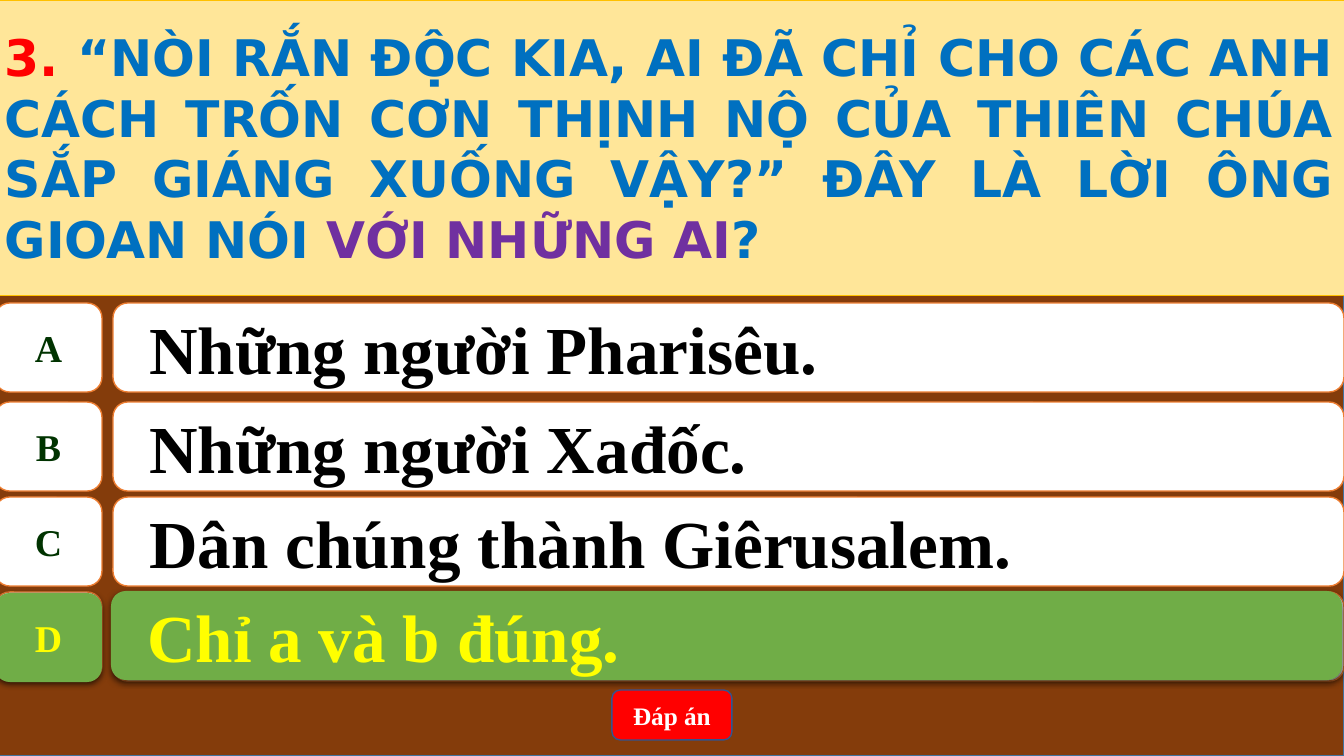
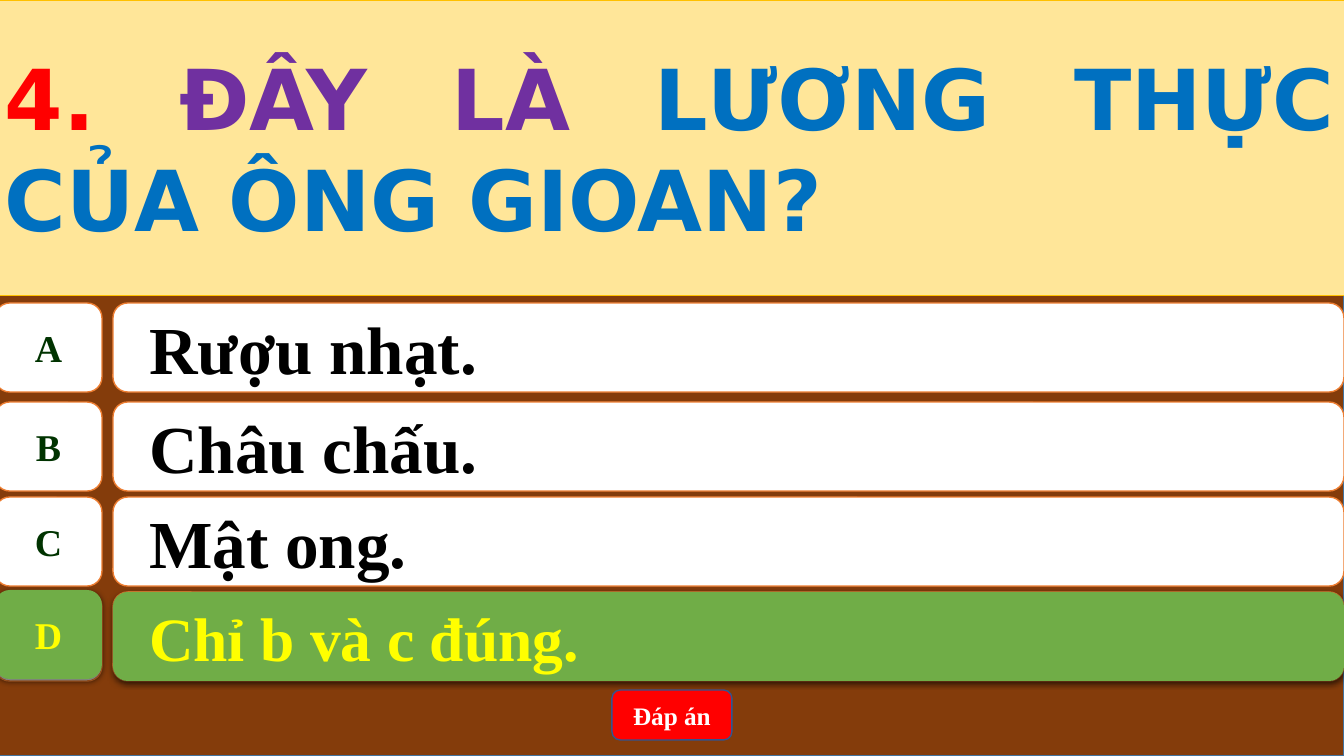
from dataclasses import dataclass

from lxml.etree import SubElement
from pptx import Presentation
from pptx.dml.color import RGBColor as Rgb
from pptx.enum.shapes import MSO_SHAPE as Shape
from pptx.enum.text import MSO_ANCHOR as Anchor, PP_ALIGN as Align
from pptx.oxml.ns import qn
from pptx.util import Emu, Pt

EMU_PER_PX = 914400 / 100.8


def px(length):
    return Emu(round(length * EMU_PER_PX))


@dataclass(frozen=True)
class Theme:
    # Colours
    board: str = "843C0B"
    board_line: str = "43739E"
    banner: str = "FFE699"
    banner_line: str = "FFC000"
    white: str = "FFFFFF"
    black: str = "000000"
    row_line: str = "ED7D31"
    letter: str = "003300"
    right_fill: str = "70AD47"
    right_text: str = "FFFF00"
    red: str = "FF0000"
    blue: str = "0070C0"
    purple: str = "7030A0"
    button_line: str = "325491"
    # Fonts and type sizes
    question_font: str = "DejaVu Sans"
    answer_font: str = "Times New Roman"
    letter_size: int = 27
    button_size: int = 18


THEME = Theme()
WIDTH, HEIGHT = 1344, 756
EDGE = -5  # bands start just outside the left edge
ROW_TOPS = (303, 402, 497, 592)
ROW_HEIGHT = 89
LETTER_WIDTH = 107
ANSWER_LEFT, ANSWER_WIDTH = 113, 1231


class QuizDeck:
    def __init__(self, theme):
        self.theme = theme
        self.deck = Presentation()
        self.deck.slide_width, self.deck.slide_height = px(WIDTH), px(HEIGHT)
        self.slide = None

    def new_slide(self):
        self.slide = self.deck.slides.add_slide(self.deck.slide_layouts[6])
        self.box(Shape.RECTANGLE, (EDGE, 0, WIDTH - EDGE, HEIGHT),
                 self.theme.board, self.theme.board_line)

    def box(self, kind, place, fill, line=None, weight=1, group=None):
        shapes = (group or self.slide).shapes
        box = shapes.add_shape(kind, *(px(length) for length in place))
        box.shadow.inherit = False
        box.fill.solid()
        box.fill.fore_color.rgb = Rgb.from_string(fill)
        if line:
            box.line.color.rgb = Rgb.from_string(line)
            box.line.width = Pt(weight)
        else:
            box.line.fill.background()
        return box

    def add_text(self, box, runs, font, size, align, wrap=True):
        frame = box.text_frame
        frame.word_wrap = wrap
        frame.vertical_anchor = Anchor.MIDDLE
        para = frame.paragraphs[0]
        para.alignment = align
        for text, color in runs:
            span = para.add_run()
            span.text = text
            span.font.name = font
            span.font.size = Pt(size)
            span.font.bold = True
            span.font.color.rgb = Rgb.from_string(color)
        return para

    def drop_shadow(self, box):
        effects = box._element.spPr.find(qn("a:effectLst"))
        shadow = SubElement(effects, qn("a:outerShdw"), blurRad=str(Pt(4.5)),
                            dist=str(Pt(1.5)), dir="5400000", algn="ctr", rotWithShape="0")
        color = SubElement(shadow, qn("a:srgbClr"), val=self.theme.black)
        SubElement(color, qn("a:alpha"), val="63000")

    def question(self, runs, size):
        banner = self.box(Shape.RECTANGLE, (EDGE, 0, WIDTH - EDGE, 295),
                          self.theme.banner, self.theme.banner_line, 0.5)
        self.add_text(banner, runs, self.theme.question_font, size, Align.JUSTIFY)

    def row_boxes(self, letter_top, answer_top, answer_left, fill, line=None):
        group = self.slide.shapes.add_group_shape()
        letter_box = self.box(Shape.FLOWCHART_ALTERNATE_PROCESS,
                              (EDGE, letter_top, LETTER_WIDTH, ROW_HEIGHT),
                              fill, line, group=group)
        answer_box = self.box(Shape.ROUNDED_RECTANGLE,
                              (answer_left, answer_top, ANSWER_WIDTH, ROW_HEIGHT),
                              fill, line, group=group)
        return letter_box, answer_box

    def row_text(self, boxes, letter, answer, size, letter_color, answer_color):
        font = self.theme.answer_font
        self.add_text(boxes[0], [(letter, letter_color)], font,
                      self.theme.letter_size, Align.CENTER, wrap=False)
        para = self.add_text(boxes[1], [(answer, answer_color)], font, size, Align.LEFT)
        para.level = 1
        properties = para._p.get_or_add_pPr()
        properties.set("marL", str(px(50)))
        properties.set("indent", str(px(-28)))

    def answers(self, texts, right_size, right_place):
        theme = self.theme
        # White rows; the last one lies under the right answer
        rows = [self.row_boxes(top, top, ANSWER_LEFT, theme.white, theme.row_line)
                for top in ROW_TOPS]
        for boxes, letter, text in zip(rows[:-1], "ABC", texts):
            self.row_text(boxes, letter, text, 48, theme.letter, theme.black)
        # Right answer
        boxes = self.row_boxes(*right_place, theme.right_fill)
        for box in boxes:
            self.drop_shadow(box)
        self.row_text(boxes, "D", texts[-1], right_size, theme.right_text, theme.right_text)

    def button(self, text):
        button = self.box(Shape.ROUNDED_RECTANGLE, (612, 690, 120, 50),
                          self.theme.red, self.theme.button_line)
        self.add_text(button, [(text, self.theme.white)], self.theme.answer_font,
                      self.theme.button_size, Align.CENTER)


# Question runs, question size, answers, right answer size,
# and the right row's letter top, answer top and answer left
QUIZ = (
    ([("3. ", THEME.red),
      ("“NÒI RẮN ĐỘC KIA, AI ĐÃ CHỈ CHO CÁC ANH CÁCH TRỐN CƠN THỊNH NỘ CỦA "
       "THIÊN CHÚA SẮP GIÁNG XUỐNG VẬY?” ĐÂY LÀ LỜI ÔNG GIOAN NÓI ", THEME.blue),
      ("VỚI NHỮNG AI", THEME.purple),
      ("?", THEME.blue)], 36,
     ("Những người Pharisêu.", "Những người Xađốc.",
      "Dân chúng thành Giêrusalem.", "Chỉ a và b đúng."), 48, (593, 591, 111)),
    ([("4. ", THEME.red),
      ("ĐÂY LÀ ", THEME.purple),
      ("LƯƠNG THỰC CỦA ÔNG GIOAN?", THEME.blue)], 60,
     ("Rượu nhạt.", "Châu chấu.", "Mật ong.", "Chỉ b và c đúng."), 44, (590, 592, 113)),
)


def main():
    quiz = QuizDeck(THEME)
    for question, size, answers, right_size, right_place in QUIZ:
        quiz.new_slide()
        quiz.answers(answers, right_size, right_place)
        quiz.button("Đáp án")
        quiz.question(question, size)
    quiz.deck.save("out.pptx")


if __name__ == "__main__":
    main()
